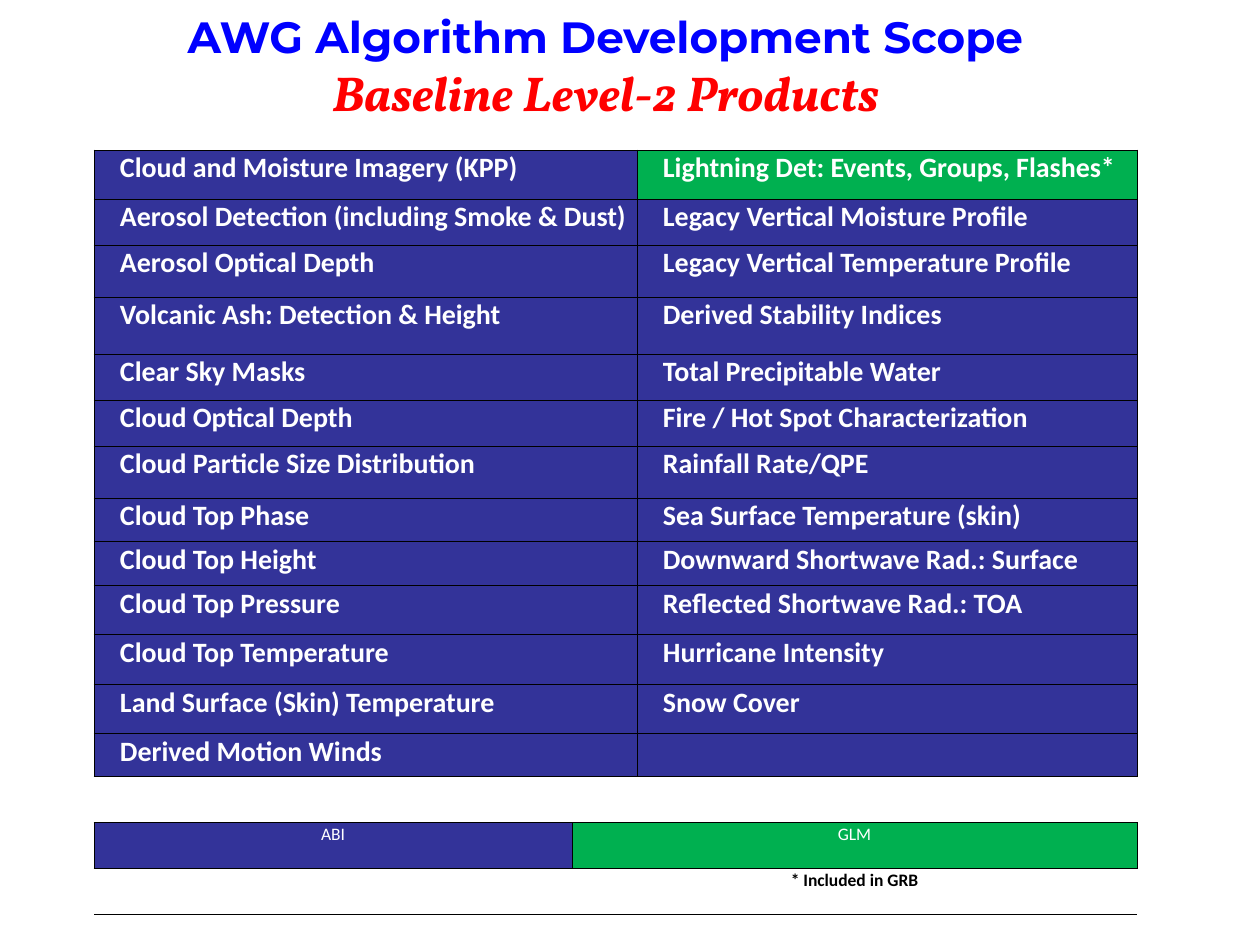
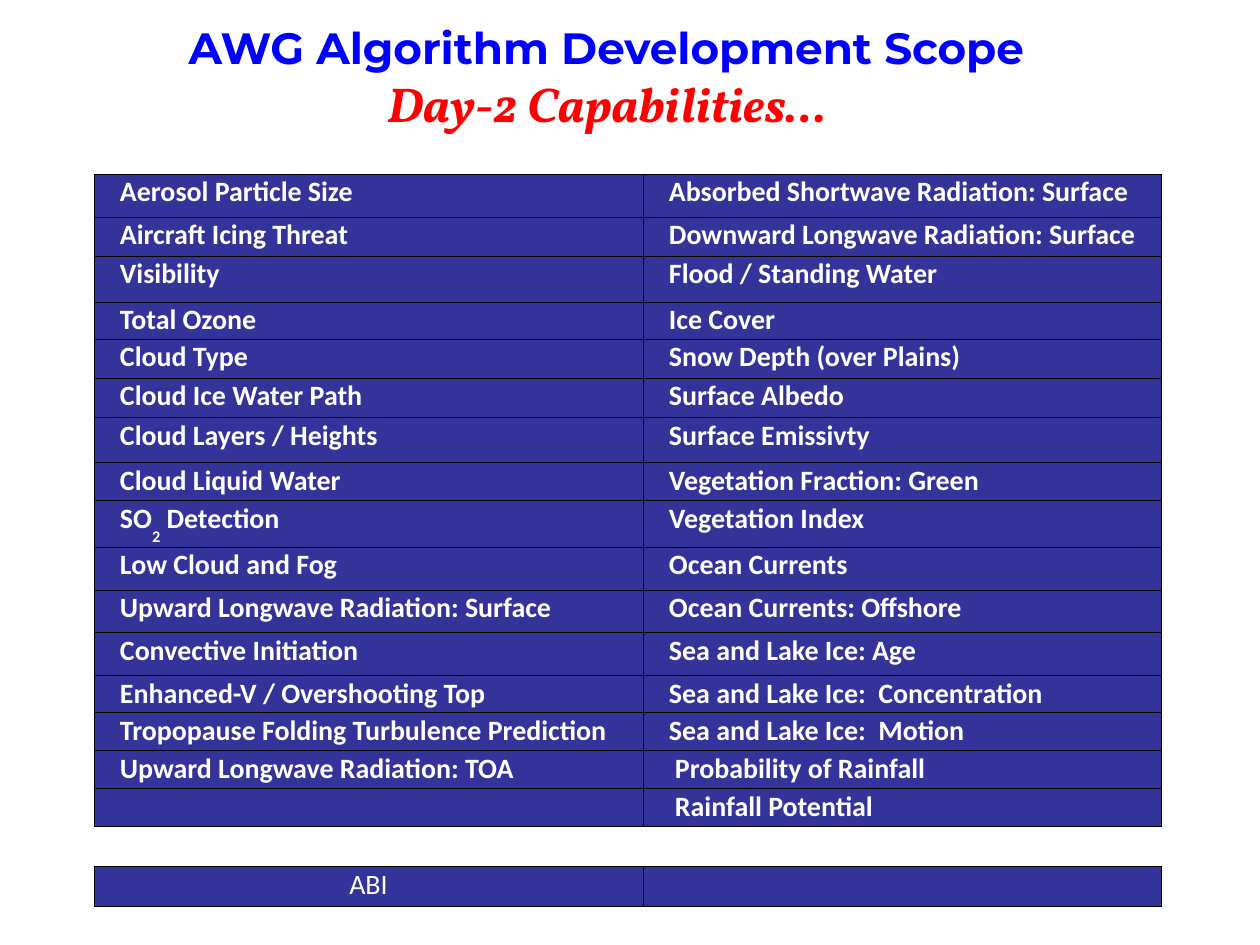
"""Build two slides that list the baseline and Day-2 products of the AWG algorithms."""
from lxml.etree import SubElement
from pptx import Presentation
from pptx.dml.color import RGBColor
from pptx.enum.text import MSO_ANCHOR, MSO_AUTO_SIZE, PP_ALIGN
from pptx.oxml import parse_xml
from pptx.oxml.ns import nsdecls, qn
from pptx.util import Pt

PX = 914400 / 126
COLORS = {
    "abi": "333399", "glm": "00B050", "white": "FFFFFF",
    "black": "000000", "blue": "0000FF", "red": "FF0000",
}
HEADING = {"name": "Montserrat", "size": Pt(25), "bold": True, "italic": False}
SUBHEADING = {"name": "Vollkorn", "size": Pt(28), "bold": True, "italic": True}
INDENT = 26


def px(length):
    return round(length * PX)


def style_cell(cell, text="", fill="abi", size=16, bold=True, color="white",
               indent=INDENT, align=PP_ALIGN.LEFT, sides="LRTB"):
    margins = {"margin_left": px(indent), "margin_right": px(1),
               "margin_top": px(1), "margin_bottom": 0}
    for name, value in margins.items():
        setattr(cell, name, value)
    cell.fill.solid()
    cell.fill.fore_color.rgb = RGBColor.from_string(COLORS[fill])
    properties = cell._tc.get_or_add_tcPr()
    for position, side in enumerate("LRTB"):
        paint = (f'<a:solidFill><a:srgbClr val="{COLORS["black"]}"/></a:solidFill>'
                 if side in sides else "<a:noFill/>")
        properties.insert(position, parse_xml(
            f'<a:ln{side} {nsdecls("a")} w="6350">{paint}</a:ln{side}>'))
    paragraph = cell.text_frame.paragraphs[0]
    paragraph.alignment = align
    if not text:
        SubElement(paragraph._p, qn("a:endParaRPr"), sz=str(size * 100))
        return
    for index, part in enumerate(text.split("_")):
        run = paragraph.add_run()
        run.text = part
        for name, value in {"name": "Calibri", "size": Pt(size), "bold": bold}.items():
            setattr(run.font, name, value)
        run.font.color.rgb = RGBColor.from_string(COLORS[color])
        if index % 2:
            run._r.get_or_add_rPr().set("baseline", "-50000")


BASELINE = [
    (49, "Cloud and Moisture Imagery (KPP)", "Lightning Det: Events, Groups, Flashes*"),
    (46, "Aerosol Detection (including Smoke & Dust)", "Legacy Vertical Moisture Profile"),
    (52, "Aerosol Optical Depth", "Legacy Vertical Temperature Profile"),
    (57, "Volcanic Ash: Detection & Height", "Derived Stability Indices"),
    (46, "Clear Sky Masks", "Total Precipitable Water"),
    (46, "Cloud Optical Depth", "Fire / Hot Spot Characterization"),
    (52, "Cloud Particle Size Distribution", "Rainfall Rate/QPE"),
    (44, "Cloud Top Phase", "Sea Surface Temperature (skin)"),
    (44, "Cloud Top Height", "Downward Shortwave Rad.: Surface"),
    (49, "Cloud Top Pressure", "Reflected Shortwave Rad.: TOA"),
    (50, "Cloud Top Temperature", "Hurricane Intensity"),
    (49, "Land Surface (Skin) Temperature", "Snow Cover"),
    (43, "Derived Motion Winds", ""),
]
DAY_2 = [
    (43, "Aerosol Particle Size", "Absorbed Shortwave Radiation: Surface"),
    (39, "Aircraft Icing Threat", "Downward Longwave Radiation: Surface"),
    (46, "Visibility", "Flood / Standing Water"),
    (37, "Total Ozone", "Ice Cover"),
    (39, "Cloud Type", "Snow Depth (over Plains)"),
    (40, "Cloud Ice Water Path", "Surface Albedo"),
    (45, "Cloud Layers / Heights", "Surface Emissivty"),
    (38, "Cloud Liquid Water", "Vegetation Fraction: Green"),
    (38, "SO_2_ Detection", "Vegetation Index"),
    (43, "Low Cloud and Fog", "Ocean Currents"),
    (43, "Upward Longwave Radiation: Surface", "Ocean Currents: Offshore"),
    (43, "Convective Initiation", "Sea and Lake Ice: Age"),
    (37, "Enhanced-V / Overshooting Top", "Sea and Lake Ice:  Concentration"),
    (38, "Tropopause Folding Turbulence Prediction", "Sea and Lake Ice:  Motion"),
    (38, "Upward Longwave Radiation: TOA", "Probability of Rainfall"),
    (38, "", "Rainfall Potential"),
]
SCOPES = [
    {"subtitle": "Baseline Level-2 Products", "title_at": (89, 14), "top": 150,
     "columns": [478, 65, 500], "products": BASELINE, "footer_rows": [46, 46, 46],
     "legend": [("ABI", "abi"), ("GLM", "glm"), ("", "glm")], "legend_size": 10,
     "footnote": "* Included in GRB"},
    {"subtitle": "Day-2 Capabilities…", "title_at": (90, 25), "top": 174,
     "columns": [549, 518], "products": DAY_2, "footer_rows": [40, 40],
     "legend": [("ABI", "abi"), ("", "abi")], "legend_size": 16,
     "footnote": ""},
]
FURTHER_INDENTED = ("Probability of Rainfall", "Rainfall Potential")

presentation = Presentation()
presentation.slide_width, presentation.slide_height = px(1260), px(945)

for scope in SCOPES:
    slide = presentation.slides.add_slide(presentation.slide_layouts[5])
    title = slide.shapes.title
    left, top = scope["title_at"]
    for name, value in {"left": left, "top": top, "width": 1033, "height": 103}.items():
        setattr(title, name, px(value))
    frame = title.text_frame
    frame.auto_size = MSO_AUTO_SIZE.NONE
    frame.vertical_anchor = MSO_ANCHOR.MIDDLE
    frame.text = f"AWG Algorithm Development Scope\n{scope['subtitle']}"
    for line, look, color in zip(frame.paragraphs, (HEADING, SUBHEADING), ("blue", "red")):
        line.alignment = PP_ALIGN.CENTER
        font = line.runs[0].font
        for name, value in look.items():
            setattr(font, name, value)
        font.color.rgb = RGBColor.from_string(COLORS[color])

    products, columns = scope["products"], scope["columns"]
    heights = [height for height, *_ in products] + scope["footer_rows"]
    last = len(columns) - 1
    table = slide.shapes.add_table(
        len(heights), len(columns), px(94), px(scope["top"]),
        px(sum(columns)), px(sum(heights))).table
    table.first_row = table.horz_banding = False
    for column, width in zip(table.columns, columns):
        column.width = px(width)
    for row, height in zip(table.rows, heights):
        row.height = px(height)

    for row, (_, left_product, right_product) in enumerate(products):
        for column in range(last):
            style_cell(table.cell(row, column), "" if column else left_product)
        style_cell(table.cell(row, last), right_product,
                   fill="glm" if right_product.startswith("Lightning") else "abi",
                   indent=INDENT + 6 * (right_product in FURTHER_INDENTED))
        if last > 1:
            table.cell(row, 0).merge(table.cell(row, last - 1))

    gap = len(products)
    legend = gap + 1
    for column, (instrument, fill) in enumerate(scope["legend"]):
        style_cell(table.cell(gap, column), fill="white", sides="TB")
        style_cell(table.cell(legend, column), instrument, fill, scope["legend_size"],
                   bold=False, indent=1, align=PP_ALIGN.CENTER)
    table.cell(gap, 0).merge(table.cell(gap, last))

    if scope["footnote"]:
        footnote = legend + 1
        for column in range(last + 1):
            style_cell(table.cell(footnote, column), scope["footnote"] if column == 1 else "",
                       "white", 10, color="black", indent=1,
                       align=PP_ALIGN.CENTER, sides="TB")
        for row in (legend, footnote):
            table.cell(row, 1).merge(table.cell(row, last))

presentation.save("out.pptx")
